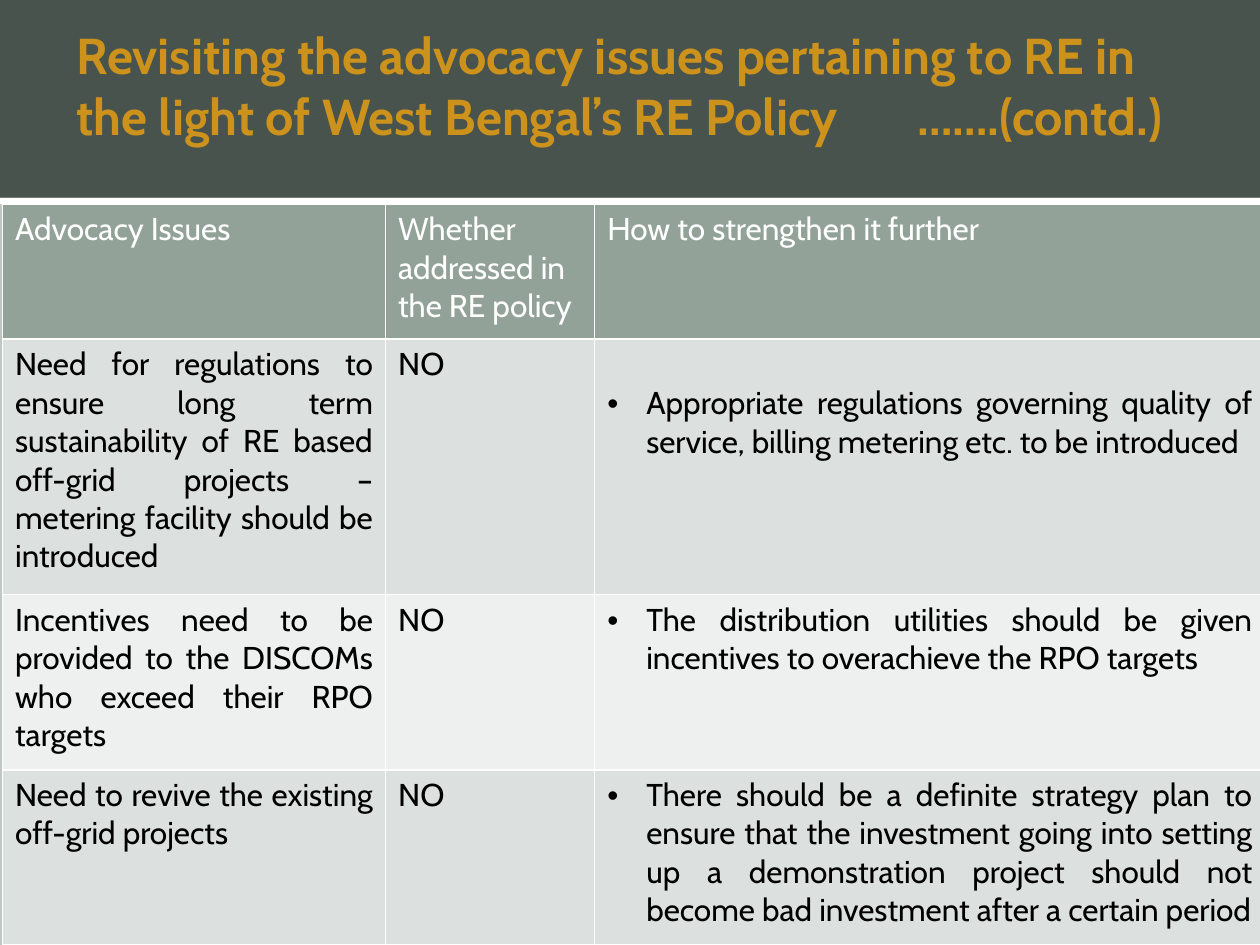
from dataclasses import dataclass

from lxml.etree import SubElement
from pptx import Presentation
from pptx.dml.color import RGBColor
from pptx.enum.shapes import MSO_SHAPE as Preset
from pptx.enum.text import MSO_ANCHOR as Anchor, PP_ALIGN as Align
from pptx.oxml.ns import qn
from pptx.util import Inches, Pt


@dataclass(frozen=True)
class Theme:
    font: str = "Cabin"
    background: str = "BEC7C2"
    banner: str = "47534C"
    white: str = "FFFFFF"
    title: str = "CD921B"
    header: str = "93A299"
    body: str = "000000"
    bands: tuple[str, str] = ("DCE0DE", "EEF0EF")
    title_size: float = 28.8
    table_size: float = 18
    border_width: float = 1


@dataclass(frozen=True)
class Issue:
    need: str
    addressed: str
    remedy: str
    remedy_top: float = 0.05


THEME = Theme()
TITLE = ("Revisiting the advocacy issues pertaining to RE in "
         "the light of West Bengal’s RE Policy\t…….(contd.)")
HEADINGS = ("Advocacy Issues", "Whether addressed in the RE policy",
            "How to strengthen it further")
ISSUES = (
    Issue("Need for regulations to ensure long term sustainability of RE based "
          "off-grid projects – metering facility should be introduced", "NO",
          "Appropriate regulations governing quality of service, billing "
          "metering etc. to be introduced", remedy_top=0.36),
    Issue("Incentives need to be provided to the DISCOMs who exceed their RPO "
          "targets", "NO",
          "The distribution utilities should be given incentives to "
          "overachieve the RPO targets"),
    Issue("Need to revive the existing off-grid projects", "NO",
          "There should be a definite strategy plan to ensure that the "
          "investment going into setting up a demonstration project should "
          "not become bad investment after a certain period"),
)
COLUMN_WIDTHS = (3.04, 1.66, 5.32)
ROW_HEIGHTS = (1.07, 2.03, 1.39, 1.39)


def set_attributes(target, values: dict) -> None:
    for name, value in values.items():
        setattr(target, name, value)


def set_font(paragraph, size: float, color: str, bold: bool = False) -> None:
    set_attributes(paragraph.font,
                   {"name": THEME.font, "size": Pt(size), "bold": bold})
    paragraph.font.color.rgb = RGBColor.from_string(color)


def set_fill(fill, color: str) -> None:
    fill.solid()
    fill.fore_color.rgb = RGBColor.from_string(color)


def add_band(slide, top: float, height: float, color: str) -> None:
    """Draw a plain bar across the full slide width."""
    band = slide.shapes.add_shape(Preset.RECTANGLE, 0, Inches(top),
                                  Inches(10), Inches(height))
    band.shadow.inherit = False
    set_fill(band.fill, color)
    band.line.fill.background()


def add_title(slide) -> None:
    box = slide.shapes.add_textbox(Inches(0.51), Inches(0.36),
                                   Inches(9.13), Inches(0.63))
    set_attributes(box.text_frame, {
        "word_wrap": True, "vertical_anchor": Anchor.MIDDLE,
        "margin_left": Inches(0.1), "margin_right": Inches(0.05)})
    paragraph = box.text_frame.paragraphs[0]
    paragraph.text = TITLE
    tabs = SubElement(paragraph._p.get_or_add_pPr(), qn("a:tabLst"))
    SubElement(tabs, qn("a:tab"), pos=str(Inches(6.67)), algn="l")
    set_font(paragraph, THEME.title_size, THEME.title, bold=True)


def set_borders(cell) -> None:
    properties = cell._tc.get_or_add_tcPr()
    for side in ("lnL", "lnR", "lnT", "lnB"):
        line = SubElement(properties, qn(f"a:{side}"),
                          w=str(Pt(THEME.border_width)))
        fill = SubElement(line, qn("a:solidFill"))
        SubElement(fill, qn("a:srgbClr"), val=THEME.white)


def add_bullet(paragraph) -> None:
    properties = paragraph._p.get_or_add_pPr()
    properties.set("marL", str(Inches(0.31)))
    properties.set("indent", str(Inches(-0.31)))
    SubElement(properties, qn("a:buFont"), typeface="Arial")
    SubElement(properties, qn("a:buChar"), char="•")


def fill_cell(cell, text: str, background: str, color: str,
              align: Align = Align.LEFT, bullet: bool = False) -> None:
    set_borders(cell)
    set_fill(cell.fill, background)
    cell.text = text
    paragraph = cell.text_frame.paragraphs[0]
    paragraph.alignment = align
    if bullet:
        add_bullet(paragraph)
    set_font(paragraph, THEME.table_size, color)


def add_issue_table(slide) -> None:
    frame = slide.shapes.add_table(
        len(ROW_HEIGHTS), len(COLUMN_WIDTHS), Inches(0.02), Inches(1.62),
        Inches(sum(COLUMN_WIDTHS)), Inches(sum(ROW_HEIGHTS)))
    table = frame.table
    set_attributes(table, {"first_row": False, "horz_banding": False})
    for column, width in zip(table.columns, COLUMN_WIDTHS):
        column.width = Inches(width)
    for row, height in zip(table.rows, ROW_HEIGHTS):
        row.height = Inches(height)

    for column, heading in enumerate(HEADINGS):
        fill_cell(table.cell(0, column), heading, THEME.header, THEME.white)
    for index, issue in enumerate(ISSUES):
        need, addressed, remedy = table.rows[index + 1].cells
        band = THEME.bands[index % 2]
        fill_cell(need, issue.need, band, THEME.body, Align.JUSTIFY)
        fill_cell(addressed, issue.addressed, band, THEME.body)
        fill_cell(remedy, issue.remedy, band, THEME.body, Align.JUSTIFY,
                  bullet=True)
        remedy.margin_top = Inches(issue.remedy_top)


def main() -> None:
    presentation = Presentation()
    set_attributes(presentation, {"slide_width": Inches(10),
                                  "slide_height": Inches(7.5)})
    slide = presentation.slides.add_slide(presentation.slide_layouts[6])
    set_fill(slide.background.fill, THEME.background)
    add_band(slide, 1.57, 0.05, THEME.white)
    add_band(slide, 0, 1.57, THEME.banner)
    add_title(slide)
    add_issue_table(slide)
    presentation.save("out.pptx")


if __name__ == "__main__":
    main()
